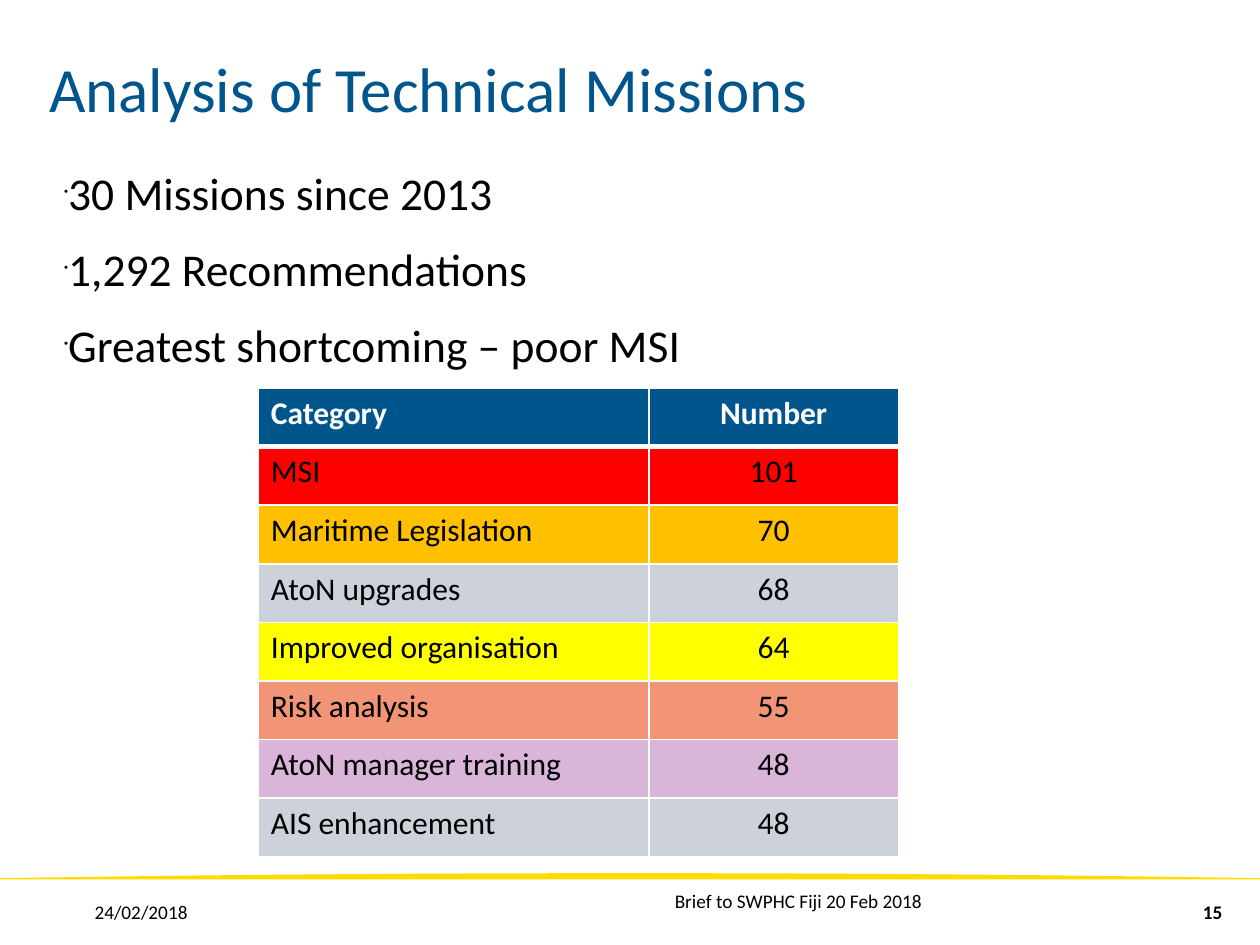
from dataclasses import dataclass

from lxml import etree
from pptx import Presentation
from pptx.dml.color import RGBColor
from pptx.enum.text import MSO_ANCHOR, MSO_AUTO_SIZE, PP_ALIGN
from pptx.oxml.ns import qn
from pptx.util import Inches, Pt

LEFT, CENTER, RIGHT = PP_ALIGN.LEFT, PP_ALIGN.CENTER, PP_ALIGN.RIGHT
MIDDLE, BOTTOM, TOP = MSO_ANCHOR.MIDDLE, MSO_ANCHOR.BOTTOM, MSO_ANCHOR.TOP


@dataclass(frozen=True)
class Theme:
    font: str = "Calibri"
    blue: str = "00558C"
    yellow: str = "FFDC00"
    black: str = "000000"
    white: str = "FFFFFF"
    title_size: int = 36
    body_size: int = 26
    table_size: int = 18
    footer_size: int = 11


theme = Theme()


def format_text(text_frame, size, color, align=LEFT, bold=False):
    for paragraph in text_frame.paragraphs:
        paragraph.alignment = align
        for run in paragraph.runs:
            run.font.name = theme.font
            run.font.size = Pt(size)
            run.font.bold = bold
            run.font.color.rgb = RGBColor.from_string(color)


def place_frame(shape, box, anchor):
    shape.left, shape.top, shape.width, shape.height = map(Inches, box)
    frame = shape.text_frame
    frame.word_wrap = True
    frame.auto_size = MSO_AUTO_SIZE.NONE
    frame.vertical_anchor = anchor
    frame.margin_left = frame.margin_right = frame.margin_top = frame.margin_bottom = 0
    return frame


presentation = Presentation()
presentation.slide_width = Inches(10)
presentation.slide_height = Inches(7.5)
slide = presentation.slides.add_slide(presentation.slide_layouts[1])

# Yellow footer band with an arched upper edge
band_width, band_edge, band_rise, steps = 10.01, 6.97, 0.04, 40
arch = []
for step in range(steps + 1):
    position = 1 - 2 * step / steps
    arch.append((Inches(band_width * (1 - step / steps)),
                 Inches(band_edge - band_rise * (1 - position ** 2))))
builder = slide.shapes.build_freeform(0, Inches(band_edge))
builder.add_line_segments([(0, Inches(6.98)), (Inches(band_width), Inches(6.98))] + arch)
band = builder.convert_to_shape()
band.shadow.inherit = False
band.fill.solid()
band.fill.fore_color.rgb = RGBColor.from_string(theme.yellow)
band.line.fill.background()

# Title
title_frame = place_frame(slide.shapes.title, (0.39, 0.17, 8.12, 0.82), BOTTOM)
title_frame.text = "Analysis of Technical Missions"
format_text(title_frame, theme.title_size, theme.blue)

# Bulleted findings
body_frame = place_frame(slide.placeholders[1], (0.51, 1.22, 8.43, 2.16), TOP)
body_frame.text = "\n".join([
    "30 Missions since 2013",
    "1,292 Recommendations",
    "Greatest shortcoming – poor MSI",
])
for paragraph in body_frame.paragraphs:
    paragraph.line_spacing = 1.2
    paragraph.space_before = Pt(0)
    paragraph.space_after = Pt(6)
    properties = paragraph._p.get_or_add_pPr()
    properties.set("marL", "0")
    properties.set("indent", "0")
    etree.SubElement(properties, qn("a:buSzPct")).set("val", "25000")
    etree.SubElement(properties, qn("a:buChar")).set("char", "•")
format_text(body_frame, theme.body_size, theme.black)

# Table of recommendations by category
rows = [
    ("Category", "Number", theme.blue),
    ("MSI", "101", "FF0000"),
    ("Maritime Legislation", "70", "FFC000"),
    ("AtoN upgrades", "68", "CCD1DA"),
    ("Improved organisation", "64", "FFFF00"),
    ("Risk analysis", "55", "F29576"),
    ("AtoN manager training", "48", "D9B6D9"),
    ("AIS enhancement", "48", "CCD1DA"),
]
table = slide.shapes.add_table(len(rows), 2, Inches(2.05), Inches(3.08),
                               Inches(5.08), Inches(3.72)).table
table.columns[0].width = Inches(3.1)
table.columns[1].width = Inches(1.98)
for row_index, (category, number, fill) in enumerate(rows):
    header = row_index == 0
    for column_index, text in enumerate((category, number)):
        cell = table.cell(row_index, column_index)
        cell.text = text
        format_text(cell.text_frame, theme.table_size,
                    theme.white if header else theme.black,
                    CENTER if column_index else LEFT, header)
        cell_properties = cell._tc.get_or_add_tcPr()
        for side in ("lnL", "lnR", "lnT", "lnB"):
            thick = (header and side == "lnB") or (row_index == 1 and side == "lnT")
            border = etree.SubElement(cell_properties, qn(f"a:{side}"))
            border.set("w", str(Pt(3 if thick else 1)))
            border_fill = etree.SubElement(border, qn("a:solidFill"))
            etree.SubElement(border_fill, qn("a:srgbClr")).set("val", theme.white)
        cell.fill.solid()
        cell.fill.fore_color.rgb = RGBColor.from_string(fill)

# Footer: date, event and slide number
footers = [
    ("24/02/2018", (0.75, 6.98, 2.32, 0.52), LEFT, False),
    ("Brief to SWPHC Fiji 20 Feb 2018", (2.56, 6.95, 4.76, 0.4), RIGHT, False),
    ("15", (9.25, 6.98, 0.75, 0.52), CENTER, True),
]
for text, box, align, bold in footers:
    footer_frame = place_frame(slide.shapes.add_textbox(0, 0, 0, 0), box, MIDDLE)
    footer_frame.text = text
    format_text(footer_frame, theme.footer_size, theme.black, align, bold)

presentation.save("out.pptx")
